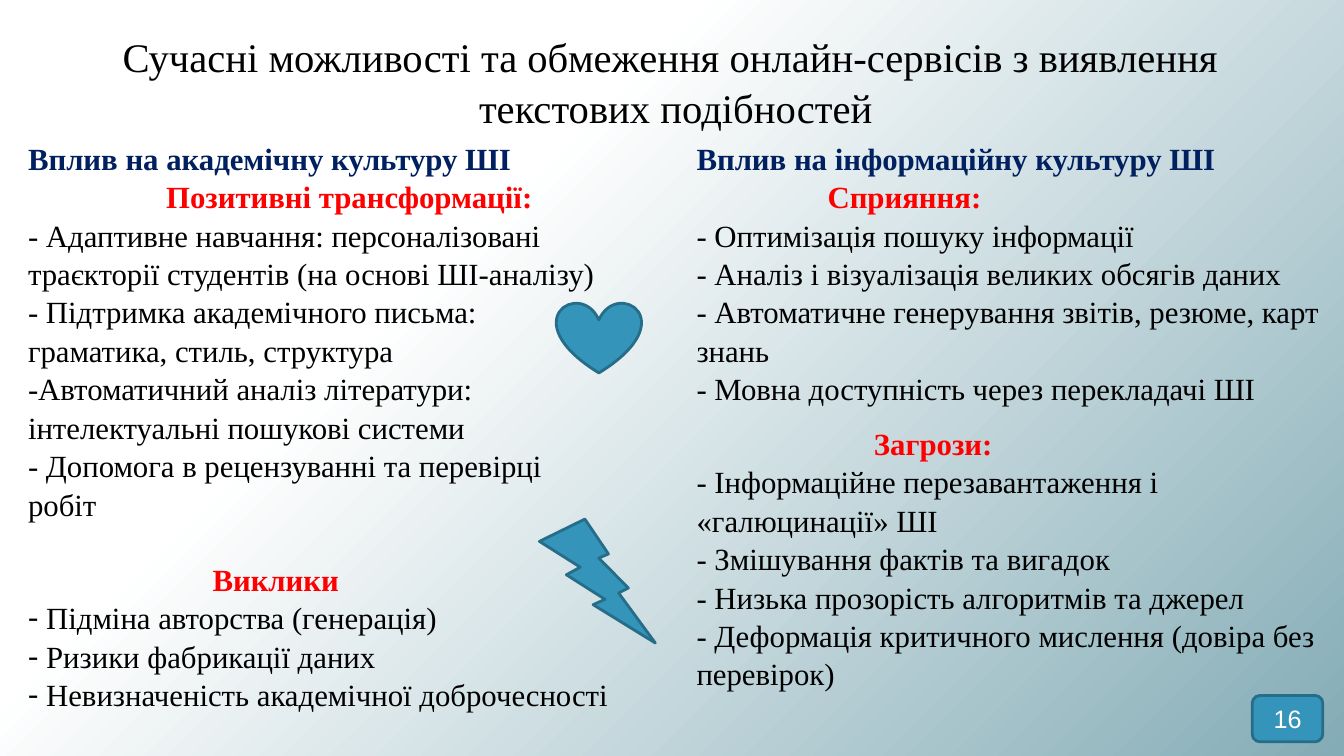
import pptx
import pptx.dml.color
import pptx.enum.shapes
import pptx.enum.text
import pptx.oxml
import pptx.oxml.ns
import pptx.util

WIDTH, HEIGHT = 13.33, 7.5
LEFT_COLUMN, RIGHT_COLUMN = 0.18, 6.81
BODY_TOP = 1.32
SERIF = "Times New Roman"
NAVY, RED, BLACK, WHITE = "002060", "FF0000", "000000", "FFFFFF"
BLUE, DARK_BLUE = "3494BA", "266D8A"
BODY_SIZE = 22
LINE_SPACING = 1.04
BULLET_INDENT = 0.18

ACADEMIC = [
    ("heading", "Вплив на академічну культуру ШІ"),
    ("subheading", "Позитивні трансформації:", 1.37, 0),
    ("item", "- Адаптивне навчання: персоналізовані траєкторії студентів (на основі ШІ-аналізу)"),
    ("item", "- Підтримка академічного письма: граматика, стиль, структура"),
    ("item", "-Автоматичний аналіз літератури: інтелектуальні пошукові системи"),
    ("item", "- Допомога в рецензуванні та перевірці робіт"),
    ("subheading", "Виклики", 1.83, 26.4),
    ("bullet", "Підміна авторства (генерація)"),
    ("bullet", "Ризики фабрикації даних"),
    ("bullet", "Невизначеність академічної доброчесності"),
]
INFORMATION = [
    ("heading", "Вплив на інформаційну культуру ШІ"),
    ("subheading", "Сприяння:", 1.3, 0),
    ("item", "- Оптимізація пошуку інформації"),
    ("item", "- Аналіз і візуалізація великих обсягів даних"),
    ("item", "- Автоматичне генерування звітів, резюме, карт знань"),
    ("item", "- Мовна доступність через перекладачі ШІ"),
]
THREATS = [
    ("subheading", "Загрози:", 1.76, 0),
    ("item", "- Інформаційне перезавантаження і «галюцинації» ШІ"),
    ("item", "- Змішування фактів та вигадок"),
    ("item", "- Низька прозорість алгоритмів та джерел"),
    ("item", "- Деформація критичного мислення (довіра без перевірок)"),
]


def color(value):
    """Turn a hex string into a colour."""
    return pptx.dml.color.RGBColor.from_string(value)


def box(left, top, width, height):
    """Turn inches into a position and size."""
    return [pptx.util.Inches(length) for length in (left, top, width, height)]


def format_runs(paragraph, size, font, value, bold=False):
    """Format every run of a paragraph."""
    for run in paragraph.runs:
        run.font.size = pptx.util.Pt(size)
        run.font.name = font
        run.font.bold = bold
        run.font.color.rgb = color(value)


def indent(paragraph, margin, first_line, bullet=None):
    """Set the margin and first-line indent, with an optional bullet."""
    properties = paragraph._p.get_or_add_pPr()
    properties.set("marL", str(pptx.util.Inches(margin)))
    properties.set("indent", str(pptx.util.Inches(first_line)))
    if bullet:
        for tag, name, value in (("buFont", "typeface", SERIF), ("buChar", "char", bullet)):
            element = pptx.oxml.parse_xml(f'<a:{tag} {pptx.oxml.ns.nsdecls("a")} {name}="{value}"/>')
            properties.append(element)


def paint_background(slide):
    """Fill the background with a diagonal gradient."""
    fill = slide.background.fill
    fill.gradient()
    fill.gradient_angle = 315
    for stop, position, value in zip(fill.gradient_stops, (0.33, 1), (WHITE, "84ACB6")):
        stop.position = position
        stop.color.rgb = color(value)


def set_title(slide, text):
    """Place and format the title placeholder."""
    title = slide.shapes.title
    title.left, title.top, title.width, title.height = box(0.78, 0.25, 11.85, 1.08)
    frame = title.text_frame
    frame.text = text
    frame.word_wrap = True
    frame.vertical_anchor = pptx.enum.text.MSO_ANCHOR.TOP
    frame.auto_size = pptx.enum.text.MSO_AUTO_SIZE.NONE
    paragraph = frame.paragraphs[0]
    paragraph.alignment = pptx.enum.text.PP_ALIGN.CENTER
    paragraph.line_spacing = LINE_SPACING
    format_runs(paragraph, 29, SERIF, BLACK)


def add_text(slide, position, lines):
    """Add a column of headings, items and bullets."""
    frame = slide.shapes.add_textbox(*box(*position)).text_frame
    frame.word_wrap = True
    for index, (kind, text, *layout) in enumerate(lines):
        paragraph = frame.paragraphs[0] if index == 0 else frame.add_paragraph()
        paragraph.text = text
        paragraph.line_spacing = LINE_SPACING
        value = {"heading": NAVY, "subheading": RED}.get(kind, BLACK)
        format_runs(paragraph, BODY_SIZE, SERIF, value, value != BLACK)
        if kind == "subheading":
            first_line, gap = layout
            paragraph.space_before = pptx.util.Pt(gap)
            indent(paragraph, 0, first_line)
        elif kind == "bullet":
            indent(paragraph, BULLET_INDENT, -BULLET_INDENT, "-")


def add_figure(slide, kind, position):
    """Add a blue preset shape with a darker outline."""
    shape = slide.shapes.add_shape(kind, *box(*position))
    shape.shadow.inherit = False
    shape.fill.solid()
    shape.fill.fore_color.rgb = color(BLUE)
    shape.line.color.rgb = color(DARK_BLUE)
    shape.line.width = pptx.util.Pt(2)
    return shape


def add_page_number(slide, text):
    """Add the page number in a rounded rectangle."""
    kind = pptx.enum.shapes.MSO_SHAPE.ROUNDED_RECTANGLE
    frame = add_figure(slide, kind, (12.42, 6.9, 0.7, 0.46)).text_frame
    frame.text = text
    frame.vertical_anchor = pptx.enum.text.MSO_ANCHOR.MIDDLE
    frame.paragraphs[0].alignment = pptx.enum.text.PP_ALIGN.CENTER
    format_runs(frame.paragraphs[0], 18, "Arial", WHITE)


def main():
    """Build the slide and save it."""
    presentation = pptx.Presentation()
    presentation.slide_width = pptx.util.Inches(WIDTH)
    presentation.slide_height = pptx.util.Inches(HEIGHT)
    slide = presentation.slides.add_slide(presentation.slide_layouts[5])
    paint_background(slide)
    set_title(slide, "Сучасні можливості та обмеження онлайн-сервісів з виявлення \vтекстових подібностей")
    add_figure(slide, pptx.enum.shapes.MSO_SHAPE.HEART, (5.52, 3, 0.84, 0.7))
    add_figure(slide, pptx.enum.shapes.MSO_SHAPE.LIGHTNING_BOLT, (5.35, 5.15, 1.15, 1.23))
    add_text(slide, (LEFT_COLUMN, BODY_TOP, 6.03, 5.65), ACADEMIC)
    add_text(slide, (RIGHT_COLUMN, BODY_TOP, 6.65, 2.69), INFORMATION)
    add_text(slide, (RIGHT_COLUMN, 4.15, 6.65, 3.3), THREATS)
    add_page_number(slide, "16")
    presentation.save("out.pptx")


if __name__ == "__main__":
    main()
